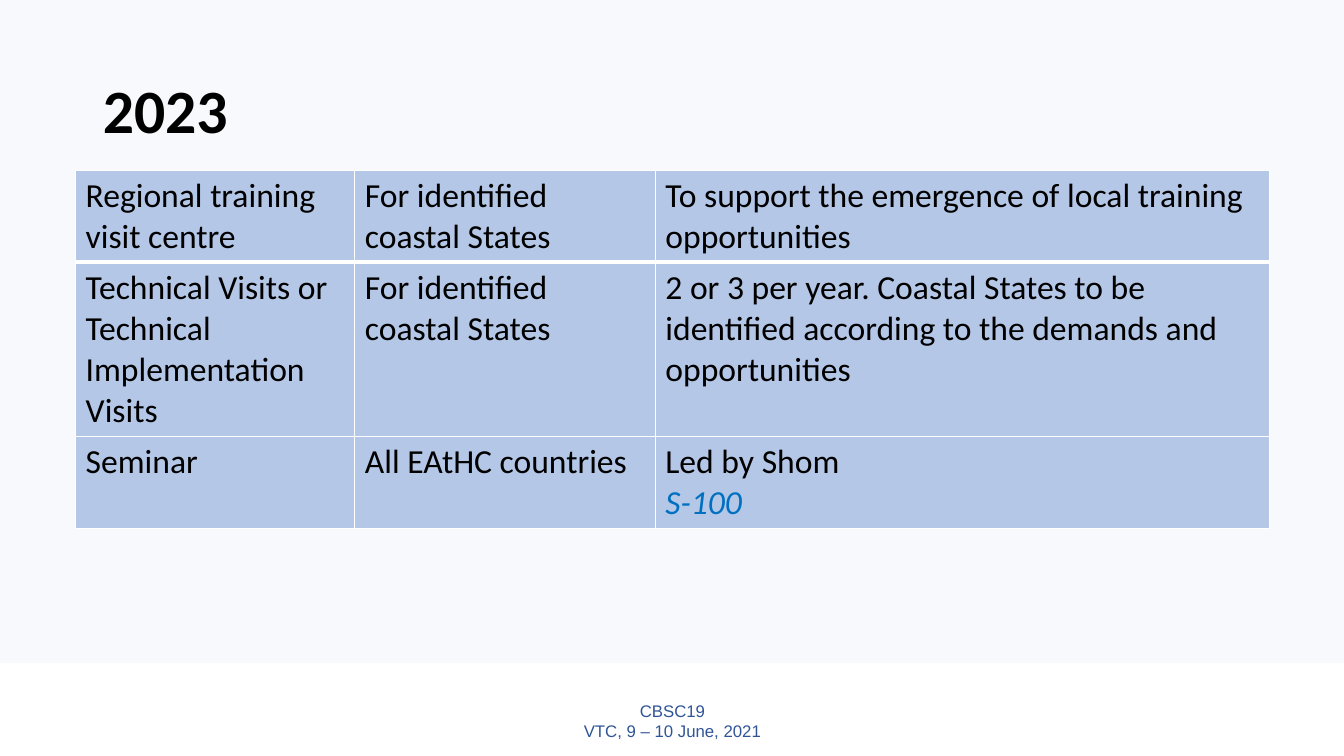
from lxml import etree
from pptx import Presentation
from pptx.dml.color import RGBColor
from pptx.enum.shapes import MSO_SHAPE
from pptx.enum.text import MSO_ANCHOR, MSO_AUTO_SIZE, PP_ALIGN
from pptx.oxml.ns import qn
from pptx.util import Inches, Pt

WHITE = RGBColor(0xFF, 0xFF, 0xFF)
BLACK = RGBColor(0x00, 0x00, 0x00)
PALE_BLUE = RGBColor(0xDA, 0xE3, 0xF3)
CELL_BLUE = RGBColor(0xB4, 0xC7, 0xE7)
FOOTER_BLUE = RGBColor(0x2F, 0x55, 0x97)
ACCENT_BLUE = RGBColor(0x00, 0x70, 0xC0)

TITLE_FONT = {"name": "Calibri", "size": Pt(44), "bold": True}
CELL_FONT = {"name": "Calibri", "size": Pt(24), "bold": False}
FOOTER_FONT = {"name": "Arial", "size": Pt(12)}

COLUMN_WIDTHS = (2.77, 2.98, 6.09)
ROW_HEIGHTS = (0.91, 1.73, 0.91)
TOPIC_NOTE = "S-100"
ACTIVITIES = (
    ("Regional training visit centre",
     "For identified coastal States",
     "To support the emergence of local training opportunities"),
    ("Technical Visits or Technical Implementation Visits",
     "For identified coastal States",
     "2 or 3 per year. Coastal States to be\n"
     "identified according to the demands and\n"
     "opportunities"),
    ("Seminar",
     "All EAtHC countries",
     f"Led by Shom\n{TOPIC_NOTE}"),
)


def format_font(font, values, color):
    for name, value in values.items():
        setattr(font, name, value)
    font.color.rgb = color


def place(shape, left, top, width, height):
    shape.left, shape.top = Inches(left), Inches(top)
    shape.width, shape.height = Inches(width), Inches(height)


def set_title(s, text):
    title = s.shapes.title
    place(title, 0.92, 0.4, 11.5, 1.45)
    tf = title.text_frame
    tf.text = text
    tf.auto_size = MSO_AUTO_SIZE.NONE
    tf.vertical_anchor = MSO_ANCHOR.MIDDLE
    p = tf.paragraphs[0]
    p.alignment = PP_ALIGN.LEFT
    p.line_spacing = 0.9
    format_font(p.runs[0].font, TITLE_FONT, BLACK)


def add_backdrop(s):
    """Put a translucent panel behind the title and table."""
    sp = s.shapes.add_shape(MSO_SHAPE.RECTANGLE, 0, 0, Inches(13.33), Inches(6.58))
    sp.shadow.inherit = False
    sp.line.fill.background()
    sp.fill.solid()
    sp.fill.fore_color.rgb = PALE_BLUE
    color = sp.element.spPr.find(qn("a:solidFill"))[0]
    etree.SubElement(color, qn("a:alpha"), val="21000")
    s.shapes.title.element.addprevious(sp.element)


def add_footer(s, text):
    sp = s.shapes.add_textbox(Inches(4.42), Inches(6.95), Inches(4.5), Inches(0.4))
    tf = sp.text_frame
    tf.word_wrap = True
    tf.vertical_anchor = MSO_ANCHOR.MIDDLE
    p = tf.paragraphs[0]
    p.text = text
    p.alignment = PP_ALIGN.CENTER
    for r in p.runs:
        format_font(r.font, FOOTER_FONT, FOOTER_BLUE)


def set_borders(cell, widths):
    """Draw white borders; widths gives points for sides L, R, T and B."""
    tc_pr = cell._tc.get_or_add_tcPr()
    for i, (side, width) in enumerate(widths.items()):
        ln = etree.Element(qn(f"a:ln{side}"), w=str(Pt(width)))
        fill = etree.SubElement(ln, qn("a:solidFill"))
        etree.SubElement(fill, qn("a:srgbClr"), val=str(WHITE))
        tc_pr.insert(i, ln)


def fill_cell(cell, text):
    cell.fill.solid()
    cell.fill.fore_color.rgb = CELL_BLUE
    cell.text = text
    for p in cell.text_frame.paragraphs:
        is_note = p.text == TOPIC_NOTE
        font = p.runs[0].font
        format_font(font, CELL_FONT, ACCENT_BLUE if is_note else BLACK)
        font.italic = is_note


def add_activities(s):
    frame = s.shapes.add_table(
        len(ROW_HEIGHTS), len(COLUMN_WIDTHS), Inches(0.75), Inches(1.69),
        Inches(sum(COLUMN_WIDTHS)), Inches(sum(ROW_HEIGHTS)))
    table = frame.table
    for column, width in zip(table.columns, COLUMN_WIDTHS):
        column.width = Inches(width)
    for i, (row, height) in enumerate(zip(table.rows, ROW_HEIGHTS)):
        row.height = Inches(height)
        borders = {"L": 1, "R": 1, "T": 3 if i == 1 else 1, "B": 3 if i == 0 else 1}
        for cell, text in zip(row.cells, ACTIVITIES[i]):
            fill_cell(cell, text)
            set_borders(cell, borders)


def main():
    prs = Presentation()
    prs.slide_width, prs.slide_height = Inches(13.33), Inches(7.5)
    s = prs.slides.add_slide(prs.slide_layouts[5])
    set_title(s, "2023")
    add_backdrop(s)
    add_footer(s, "CBSC19\vVTC, 9 – 10 June, 2021")
    add_activities(s)
    prs.save("out.pptx")


if __name__ == "__main__":
    main()
